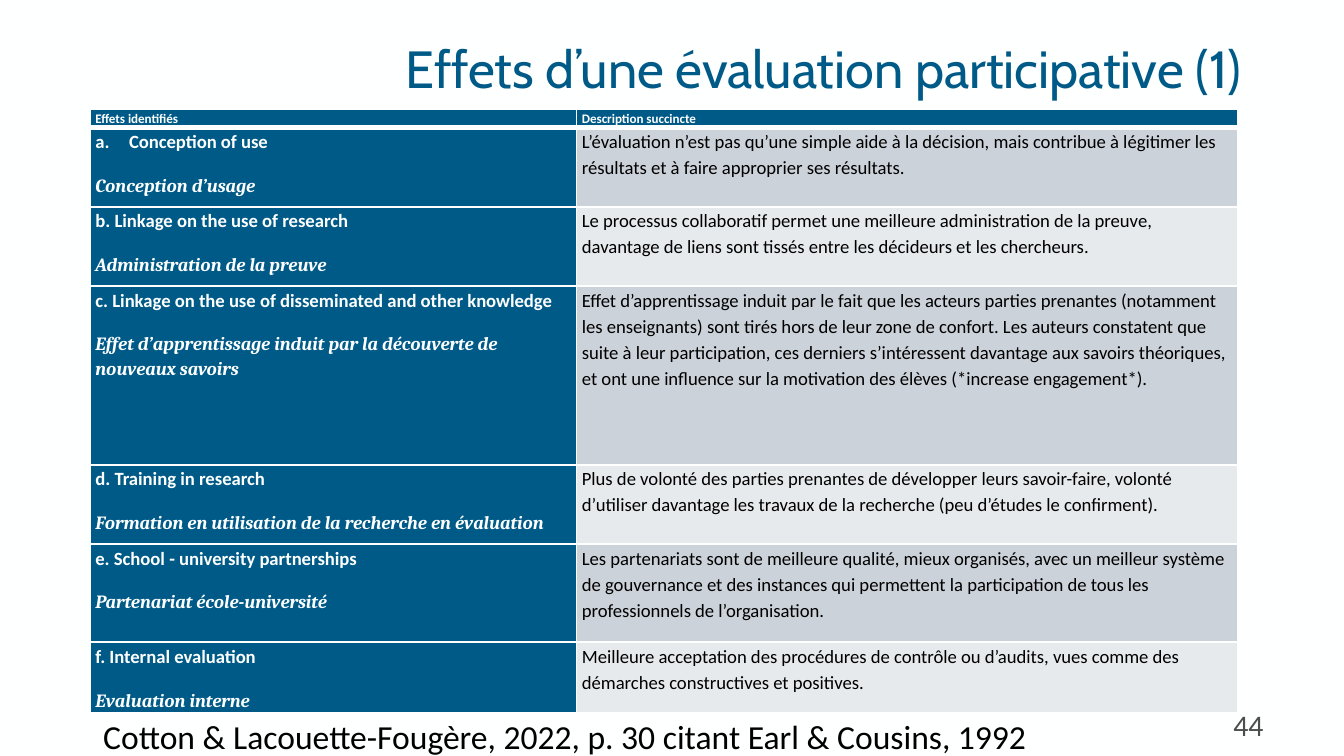
import pptx
import pptx.dml.color
import pptx.enum.text
import pptx.oxml
import pptx.oxml.ns
import pptx.util
from pptx.util import Inches

COLORS = {"paper": "FEFFFF", "blue": "005A87", "dark_band": "CCD2D9",
          "light_band": "E7EAED", "text": "000000", "number": "4C4D4C"}

TITLE = "Effets d’une évaluation participative (1)"
SOURCE = "Cotton & Lacouette-Fougère, 2022, p. 30 citant Earl & Cousins, 1992"
PAGE = "44"
HEADERS = ("Effets identifiés", "Description succincte")
# English name, French name, description, row height
EFFECTS = [
    ("Conception of use", "Conception d’usage",
     "L’évaluation n’est pas qu’une simple aide à la décision, mais contribue à "
     "légitimer les résultats et à faire approprier ses résultats.", 0.59),
    ("b. Linkage on the use of research", "Administration de la preuve",
     "Le processus collaboratif permet une meilleure administration de la preuve, "
     "davantage de liens sont tissés entre les décideurs et les chercheurs.", 0.59),
    ("c. Linkage on the use of disseminated and other knowledge",
     "Effet d’apprentissage induit par la découverte de nouveaux savoirs",
     "Effet d’apprentissage induit par le fait que les acteurs parties prenantes "
     "(notamment les enseignants) sont tirés hors de leur zone de confort. Les auteurs "
     "constatent que suite à leur participation, ces derniers s’intéressent davantage "
     "aux savoirs théoriques, et ont une influence sur la motivation des élèves "
     "(*increase engagement*).", 1.33),
    ("d. Training in research", "Formation en utilisation de la recherche en évaluation",
     "Plus de volonté des parties prenantes de développer leurs savoir-faire, volonté "
     "d’utiliser davantage les travaux de la recherche (peu d’études le confirment).", 0.59),
    ("e. School - university partnerships", "Partenariat école-université",
     "Les partenariats sont de meilleure qualité, mieux organisés, avec un meilleur "
     "système de gouvernance et des instances qui permettent la participation de tous "
     "les professionnels de l’organisation.", 0.73),
    ("f. Internal evaluation", "Evaluation interne",
     "Meilleure acceptation des procédures de contrôle ou d’audits, vues comme des "
     "démarches constructives et positives.", 0.44),
]
COLUMN_WIDTHS = (3.62, 4.92)
HEADER_HEIGHT = 0.14


def rgb(name):
    return pptx.dml.color.RGBColor.from_string(COLORS[name])


def format_runs(p, size, color, font="Calibri", bold=False, italic=False):
    for r in p.runs:
        r.font.name = font
        r.font.size = pptx.util.Pt(size)
        r.font.color.rgb = rgb(color)
        r.font.bold = bold
        r.font.italic = italic


def set_borders(cell, bottom_width=1):
    tc_pr = cell._tc.get_or_add_tcPr()
    for i, side in enumerate("LRTB"):
        width = pptx.util.Pt(bottom_width if side == "B" else 1)
        tc_pr.insert(i, pptx.oxml.parse_xml(
            f'<a:ln{side} {pptx.oxml.ns.nsdecls("a")} w="{width}"><a:solidFill>'
            f'<a:srgbClr val="{COLORS["paper"]}"/></a:solidFill></a:ln{side}>'))


def fill_cell(cell, lines, fill, bottom_width=1):
    """Write lines, each a text with its run format, into a filled and bordered cell."""
    cell.margin_left = cell.margin_right = Inches(0.04)
    cell.margin_top = cell.margin_bottom = 0
    cell.fill.solid()
    cell.fill.fore_color.rgb = rgb(fill)
    set_borders(cell, bottom_width)
    tf = cell.text_frame
    tf.text = "\n".join(text for text, _ in lines)
    for p, (_, style) in zip(tf.paragraphs, lines):
        p.line_spacing = 1.15
        p.space_after = pptx.util.Pt(10)
        format_runs(p, **style)


def number_with_letter(p):
    p_pr = p._p.get_or_add_pPr()
    p_pr.set("marL", str(Inches(0.25)))
    p_pr.set("indent", str(Inches(-0.25)))
    p_pr.append(pptx.oxml.parse_xml(
        f'<a:buAutoNum {pptx.oxml.ns.nsdecls("a")} type="alphaLcPeriod"/>'))


def add_text(s, text, box, size, color, align, wrap=True):
    tf = s.shapes.add_textbox(*map(Inches, box)).text_frame
    tf.word_wrap = wrap
    tf.text = text
    tf.paragraphs[0].alignment = align
    format_runs(tf.paragraphs[0], size, color)
    return tf


def add_title(s):
    title = s.shapes.title
    title.left, title.top, title.width, title.height = map(Inches, (1.77, 0.21, 7.63, 0.59))
    tf = title.text_frame
    tf.text = TITLE
    tf.word_wrap = True
    tf.auto_size = pptx.enum.text.MSO_AUTO_SIZE.NONE
    tf.vertical_anchor = pptx.enum.text.MSO_ANCHOR.MIDDLE
    tf.margin_left, tf.margin_right = Inches(0.07), Inches(0.17)
    tf.margin_top = tf.margin_bottom = Inches(0.04)
    tf.paragraphs[0].alignment = pptx.enum.text.PP_ALIGN.RIGHT
    format_runs(tf.paragraphs[0], 28, "blue", "Cabin")


def add_effects_table(s):
    heights = [HEADER_HEIGHT] + [effect[3] for effect in EFFECTS]
    table = s.shapes.add_table(
        len(heights), len(COLUMN_WIDTHS), Inches(0.67), Inches(0.81),
        Inches(sum(COLUMN_WIDTHS)), Inches(sum(heights))).table
    for column, width in zip(table.columns, COLUMN_WIDTHS):
        column.width = Inches(width)
    for row, height in zip(table.rows, heights):
        row.height = Inches(height)

    header = dict(size=7, color="paper", bold=True)
    english = dict(size=10, color="paper", bold=True)
    french = dict(english, font="Cambria", italic=True)
    body = dict(size=10, color="text")
    for c, text in enumerate(HEADERS):
        fill_cell(table.cell(0, c), [(text, header)], "blue", bottom_width=3)
    for i, (name, translation, description, _) in enumerate(EFFECTS, 1):
        fill_cell(table.cell(i, 0), [(name, english), (translation, french)], "blue")
        fill_cell(table.cell(i, 1), [(description, body)],
                  "dark_band" if i % 2 else "light_band")
    number_with_letter(table.cell(1, 0).text_frame.paragraphs[0])


def main():
    prs = pptx.Presentation()
    prs.slide_width = Inches(10)
    prs.slide_height = prs.slide_width * 9 // 16
    s = prs.slides.add_slide(prs.slide_layouts[5])
    s.background.fill.solid()
    s.background.fill.fore_color.rgb = rgb("paper")
    align = pptx.enum.text.PP_ALIGN
    add_text(s, PAGE, (7.17, 5.21, 2.33, 0.3), 16, "number", align.RIGHT)
    add_title(s)
    source = add_text(s, SOURCE, (0.67, 5.28, 7.16, 0.4), 18, "text", align.LEFT, wrap=False)
    source.auto_size = pptx.enum.text.MSO_AUTO_SIZE.SHAPE_TO_FIT_TEXT
    add_effects_table(s)
    prs.save("out.pptx")


if __name__ == "__main__":
    main()
